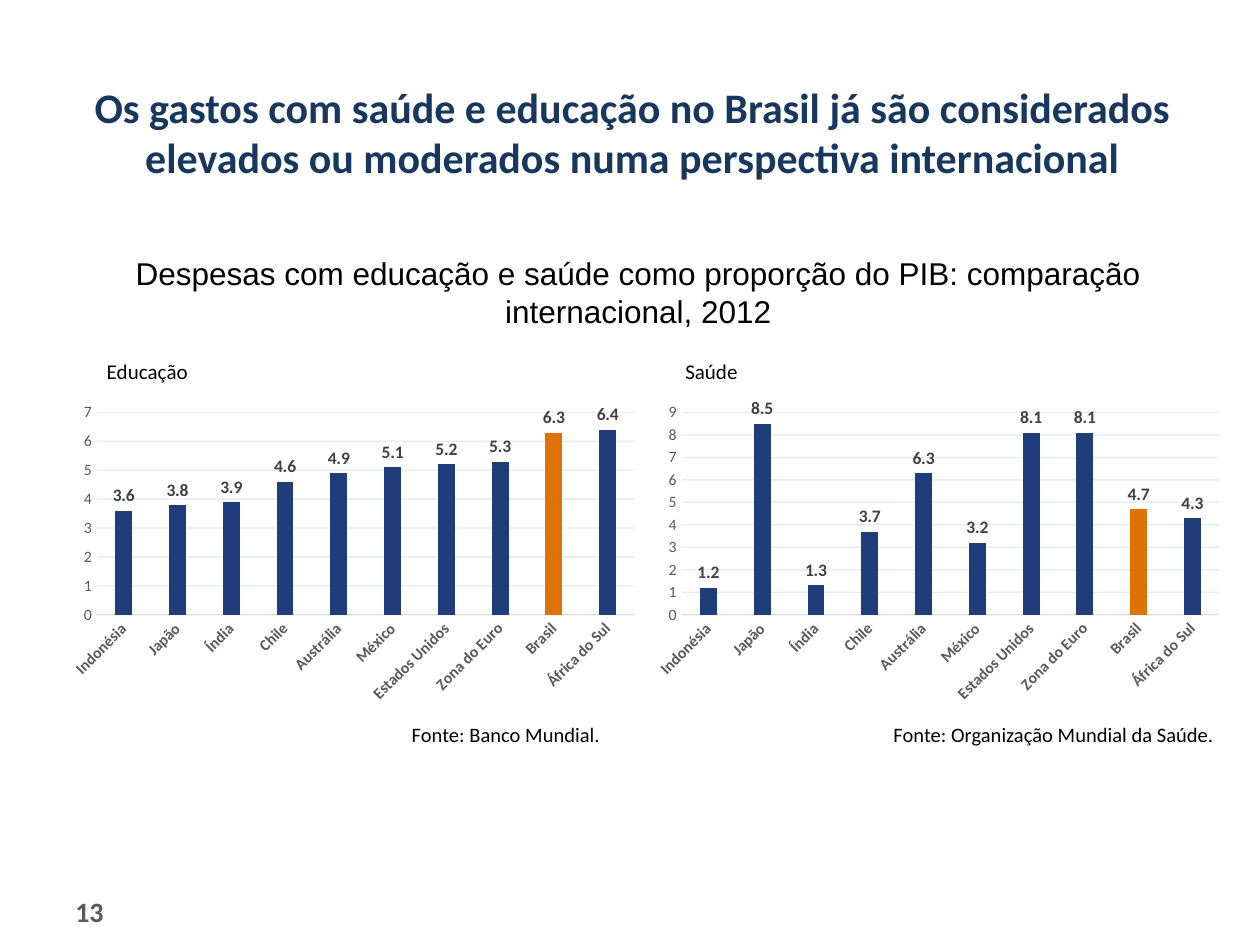
from lxml.etree import SubElement
from pptx import Presentation
from pptx.chart.data import CategoryChartData
from pptx.dml.color import RGBColor
from pptx.enum.chart import XL_CHART_TYPE, XL_LABEL_POSITION, XL_TICK_MARK
from pptx.enum.text import MSO_ANCHOR, MSO_AUTO_SIZE, PP_ALIGN
from pptx.oxml import parse_xml
from pptx.oxml.ns import nsdecls, qn
from pptx.util import Pt

COLORS = {
    "title": "17375E",
    "text": "000000",
    "muted": "595959",
    "label": "404040",
    "bar": "1E3D7A",
    "highlight": "E07204",
    "axis": "D9D9D9",
    "grid": "4F81BD",
}
COUNTRIES = ["Indonésia", "Japão", "Índia", "Chile", "Austrália", "México",
             "Estados Unidos", "Zona do Euro", "Brasil", "África do Sul"]
PANELS = [
    ("Educação", [3.6, 3.8, 3.9, 4.6, 4.9, 5.1, 5.2, 5.3, 6.3, 6.4], 7,
     35.3, 0.07, "Fonte: Banco Mundial.", 37.4),
    ("Saúde", [1.2, 8.5, 1.3, 3.7, 6.3, 3.2, 8.1, 8.1, 4.7, 4.3], 9,
     369.4, 0.06, "Fonte: Organização Mundial da Saúde.", 388.1),
]


class SlideBuilder:
    def __init__(self, presentation):
        self.slide = presentation.slides.add_slide(presentation.slide_layouts[5])
        self.font_name = "Calibri"

    def style(self, font, size, color, bold=False, name=None):
        font.name = name or self.font_name
        font.size = Pt(size)
        font.bold = bold
        font.color.rgb = RGBColor.from_string(COLORS[color])

    def fill_text(self, shape, text, box, size, color, bold=False, name=None,
                  align=PP_ALIGN.LEFT, anchor=MSO_ANCHOR.TOP):
        shape.left, shape.top, shape.width, shape.height = map(Pt, box)
        frame = shape.text_frame
        frame.text = text
        frame.word_wrap = True
        frame.auto_size = MSO_AUTO_SIZE.NONE
        frame.vertical_anchor = anchor
        paragraph = frame.paragraphs[0]
        paragraph.alignment = align
        self.style(paragraph.runs[0].font, size, color, bold, name)

    def title(self, text, box):
        self.fill_text(self.slide.shapes.title, text, box, 24, "title", True,
                       align=PP_ALIGN.CENTER, anchor=MSO_ANCHOR.MIDDLE)

    def text(self, text, box, size, color, **options):
        shape = self.slide.shapes.add_textbox(*map(Pt, box))
        self.fill_text(shape, text, box, size, color, **options)

    def place(self, parent, index, **fractions):
        for layout in parent.findall(qn("c:layout")):
            parent.remove(layout)
        inner = '<c:layoutTarget val="inner"/>' if "w" in fractions else ""
        modes = "".join(f'<c:{key}Mode val="edge"/>' for key in "xy")
        values = "".join(f'<c:{key} val="{value}"/>' for key, value in fractions.items())
        parent.insert(index, parse_xml(
            f'<c:layout {nsdecls("c")}><c:manualLayout>{inner}{modes}{values}'
            "</c:manualLayout></c:layout>"))

    def chart(self, heading, values, maximum, box, heading_x):
        data = CategoryChartData(number_format="0.0")
        data.categories = COUNTRIES
        data.add_series(heading, values)
        chart = self.slide.shapes.add_chart(
            XL_CHART_TYPE.COLUMN_CLUSTERED, *map(Pt, box), data).chart
        self.style(chart.font, 10, "text")
        chart.has_legend = False
        self.chart_title(chart, heading, heading_x)
        self.place(chart._chartSpace.chart.plotArea, 0, x=0.06, y=0.19, w=0.92, h=0.55)
        self.axes(chart, maximum)
        self.columns(chart.plots[0])

    def chart_title(self, chart, heading, x):
        chart.has_title = True
        title = chart.chart_title
        title.text_frame.text = heading
        title.include_in_layout = False
        self.style(title.text_frame.paragraphs[0].runs[0].font, 12, "text")
        self.place(title._element, 1, x=x, y=0.03)

    def axes(self, chart, maximum):
        for axis, bold in ((chart.category_axis, True), (chart.value_axis, False)):
            axis.major_tick_mark = XL_TICK_MARK.NONE
            axis.minor_tick_mark = XL_TICK_MARK.NONE
            self.style(axis.tick_labels.font, 9, "muted", bold)
        category_axis, value_axis = chart.category_axis, chart.value_axis
        category_axis.format.line.color.rgb = RGBColor.from_string(COLORS["axis"])
        category_axis.format.line.width = Pt(0.75)
        category_axis._element.txPr.find(qn("a:bodyPr")).set("rot", "-2700000")
        value_axis.minimum_scale = 0
        value_axis.maximum_scale = maximum
        value_axis.major_unit = 1
        value_axis.tick_labels.number_format = "0"
        value_axis.tick_labels.number_format_is_linked = False
        value_axis.format.line.fill.background()
        grid = value_axis.major_gridlines
        grid.format.line.color.rgb = RGBColor.from_string(COLORS["grid"])
        grid.format.line.width = Pt(0.75)
        color = next(value_axis._element.find(qn("c:majorGridlines")).iter(qn("a:srgbClr")))
        SubElement(color, qn("a:alpha")).set("val", "14000")

    def columns(self, plot):
        plot.vary_by_categories = False
        plot.gap_width = 219
        plot.overlap = -27
        series = plot.series[0]
        brazil = series.points[COUNTRIES.index("Brasil")]
        for target, color in ((series, "bar"), (brazil, "highlight")):
            target.format.fill.solid()
            target.format.fill.fore_color.rgb = RGBColor.from_string(COLORS[color])
        labels = series.data_labels
        labels.show_value = True
        labels.position = XL_LABEL_POSITION.OUTSIDE_END
        labels.number_format = "0.0"
        labels.number_format_is_linked = False
        self.style(labels.font, 10, "label", True)


def main():
    presentation = Presentation()
    presentation.slide_width, presentation.slide_height = Pt(720), Pt(540)
    builder = SlideBuilder(presentation)
    builder.text("13", (36, 507.6, 648, 28.8), 16, "muted", bold=True)
    builder.title("Os gastos com saúde e educação no Brasil já são considerados "
                  "elevados ou moderados numa perspectiva internacional",
                  (37.4, 49.7, 648, 51.1))
    for heading, values, maximum, left, heading_x, source, source_left in PANELS:
        builder.chart(heading, values, maximum, (left, 195.8, 334.1, 210.2), heading_x)
        builder.text(source, (source_left, 406.1, 312.5, 26.6), 11.7, "text",
                     align=PP_ALIGN.RIGHT, anchor=MSO_ANCHOR.MIDDLE)
    builder.text("Despesas com educação e saúde como proporção do PIB: "
                 "comparação internacional, 2012",
                 (36, 141.8, 657.4, 51.1), 18, "text", name="Arial",
                 align=PP_ALIGN.CENTER)
    presentation.save("out.pptx")


if __name__ == "__main__":
    main()
